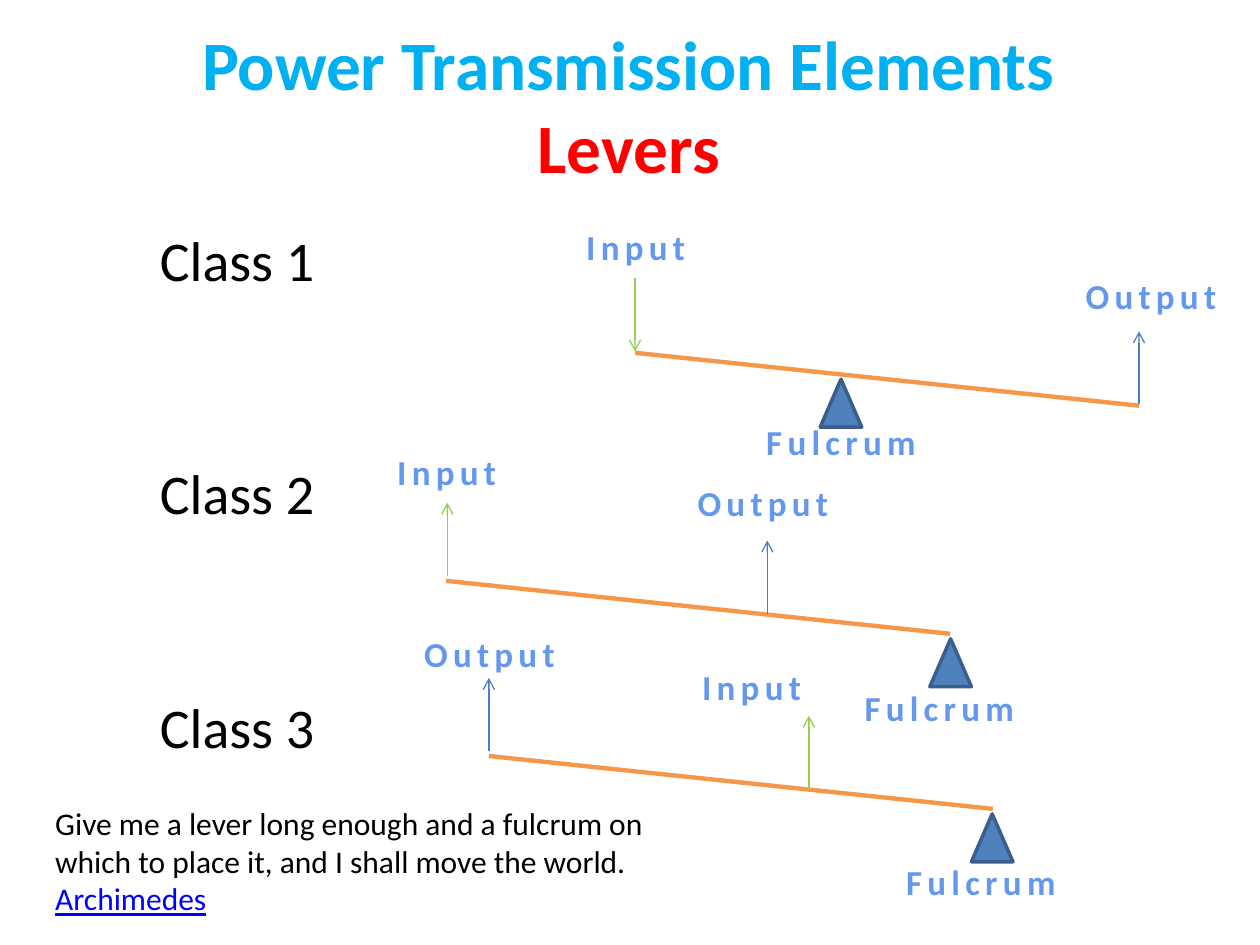
from dataclasses import dataclass

from lxml import etree
from pptx import Presentation
from pptx.dml.color import RGBColor
from pptx.enum.shapes import MSO_CONNECTOR, MSO_SHAPE
from pptx.enum.text import MSO_ANCHOR, PP_ALIGN
from pptx.oxml.ns import qn
from pptx.util import Inches, Pt

LINE = MSO_CONNECTOR.STRAIGHT
TRIANGLE = MSO_SHAPE.ISOSCELES_TRIANGLE
MIDDLE = MSO_ANCHOR.MIDDLE
LEFT, CENTER = PP_ALIGN.LEFT, PP_ALIGN.CENTER
FONT = "Calibri"
SPAN, DROP, REACH = 4, 0.42, 0.58
COLORS = {"Input": "92D050", "Output": "4B7EBC"}
WIDTHS = {"Input": 1.25, "Output": 1.43, "Fulcrum": 1.43}


@dataclass
class Label:
    name: str
    left: float
    top: float


@dataclass
class Force:
    label: Label
    x: float
    start: float
    way: int = -1


@dataclass
class Lever:
    x: float
    y: float
    pivot: tuple[float, float]
    label: Label
    forces: list[Force]


LEVERS = [
    Lever(5.04, 2.8, (6.51, 3.01), Label("Fulcrum", 5.96, 3.29), [
        Force(Label("Input", 4.42, 1.74), 5.04, 2.21, 1),
        Force(Label("Output", 8.42, 2.13), 9.04, 3.21)]),
    Lever(3.54, 4.61, (7.38, 5.07), Label("Fulcrum", 6.74, 5.4), [
        Force(Label("Input", 2.92, 3.53), 3.55, 4.57),
        Force(Label("Output", 5.34, 3.77), 6.09, 4.87)]),
    Lever(3.88, 6, (7.71, 6.46), Label("Fulcrum", 7.07, 6.78), [
        Force(Label("Input", 5.34, 5.23), 6.42, 6.26),
        Force(Label("Output", 3.17, 4.97), 3.88, 5.96)]),
]


def color(code: str) -> RGBColor:
    return RGBColor.from_string(code)


def add_text(slide, box: tuple, text: str, size: float, code: str = "000000",
             bold: bool = False, align=LEFT):
    frame = slide.shapes.add_textbox(*map(Inches, box)).text_frame
    frame.word_wrap = True
    frame.text = text
    for para in frame.paragraphs:
        para.alignment = align
        for run in para.runs:
            font = run.font
            font.name, font.size, font.bold = FONT, Pt(size), bold
            font.color.rgb = color(code)
    return frame


def add_label(slide, label: Label) -> None:
    box = (label.left, label.top, WIDTHS[label.name], 0.44)
    frame = add_text(slide, box, label.name, 20, "6398ED", True, CENTER)
    props = frame.paragraphs[0].runs[0].font._element
    props.set("spc", "300")


def add_line(slide, start: tuple, end: tuple, code: str, width: float,
             arrow: bool = False) -> None:
    line = slide.shapes.add_connector(LINE, *map(Inches, start + end))
    line.line.color.rgb = color(code)
    line.line.width = Pt(width)
    props = line._element.spPr
    if arrow:
        etree.SubElement(props.find(qn("a:ln")), qn("a:tailEnd"), type="arrow")
    etree.SubElement(props, qn("a:effectLst"))


def add_pivot(slide, spot: tuple) -> None:
    shape = slide.shapes.add_shape(TRIANGLE, *map(Inches, spot + (0.33, 0.38)))
    shape.shadow.inherit = False
    shape.fill.solid()
    shape.fill.fore_color.rgb = color("4F81BD")
    shape.line.color.rgb = color("3A5F8C")
    shape.line.width = Pt(2)


def add_lever(slide, lever: Lever) -> None:
    end = (lever.x + SPAN, lever.y + DROP)
    add_line(slide, (lever.x, lever.y), end, "F79646", 2.5)
    add_pivot(slide, lever.pivot)
    add_label(slide, lever.label)
    for force in lever.forces:
        tip = (force.x, force.start + force.way * REACH)
        add_line(slide, (force.x, force.start), tip,
                 COLORS[force.label.name], 0.75, True)
        add_label(slide, force.label)


def main() -> None:
    deck = Presentation()
    deck.slide_width, deck.slide_height = Inches(10), Inches(7.5)
    slide = deck.slides.add_slide(deck.slide_layouts[6])

    title = add_text(slide, (0.74, 0.33, 8.5, 1),
                     "Power Transmission Elements\vLevers", 39.6, "00B0F0", True, CENTER)
    title.vertical_anchor = MIDDLE
    title.paragraphs[0].runs[1].font.color.rgb = color("FF0000")

    names = add_text(slide, (1.17, 1.74, 2.42, 4.92),
                     "Class 1\nClass 2\nClass 3", 32)
    for para in names.paragraphs:
        para.space_after = Pt(95)

    for lever in LEVERS:
        add_lever(slide, lever)

    quote = add_text(slide, (0.34, 6.33, 5, 1.01),
                     "Give me a lever long enough and a fulcrum on which to place it, "
                     "and I shall move the world.\nArchimedes", 18)
    author = quote.paragraphs[1].runs[0].font
    author.color.rgb = color("0000FF")
    author.underline = True

    deck.save("out.pptx")


if __name__ == "__main__":
    main()
